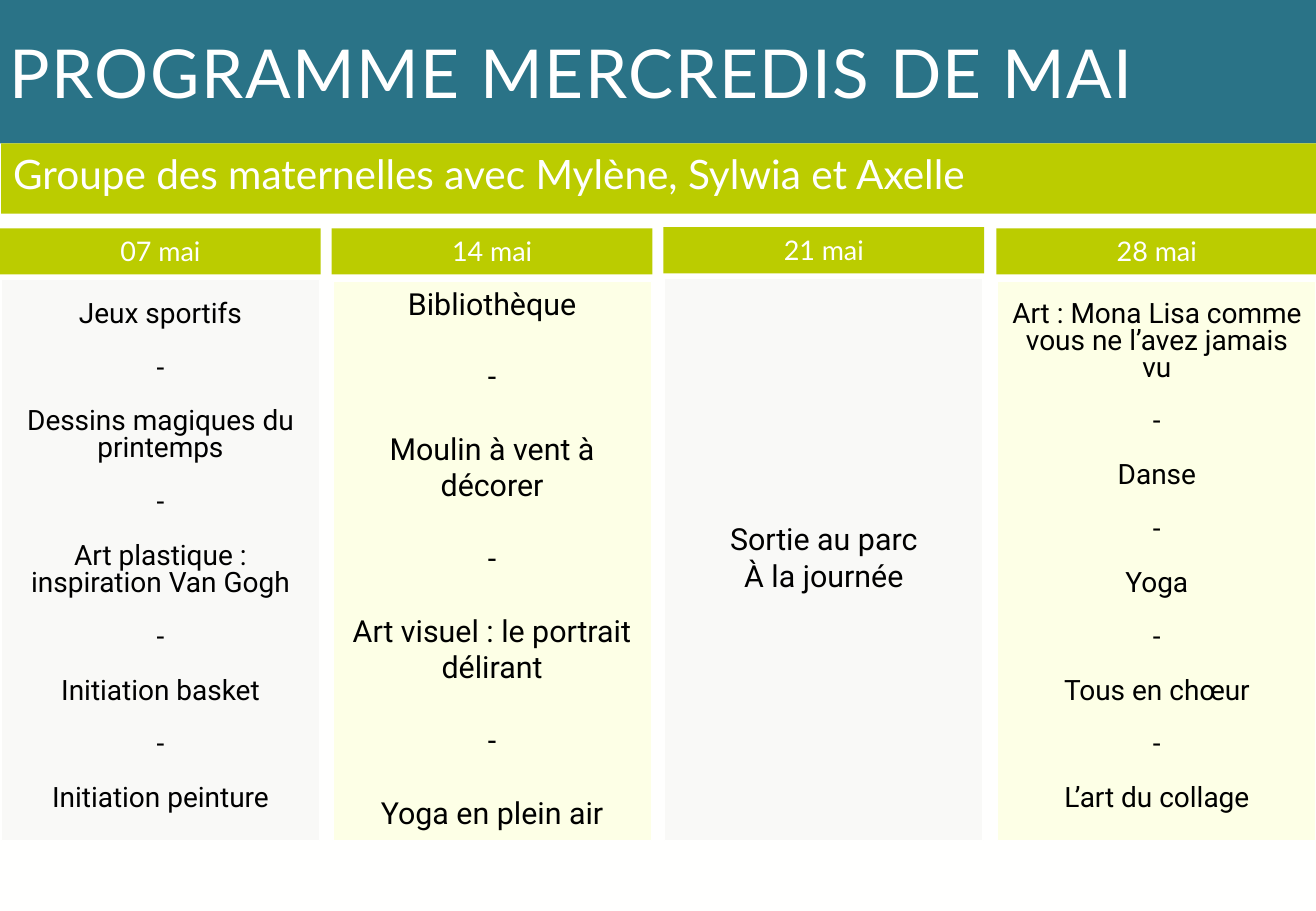
from lxml import etree
from pptx import Presentation
from pptx.dml.color import RGBColor
from pptx.enum.shapes import MSO_SHAPE as SHAPE
from pptx.enum.text import MSO_ANCHOR as ANCHOR, PP_ALIGN as ALIGN
from pptx.oxml.ns import qn
from pptx.util import Inches, Pt

BLUE = RGBColor(0x2A, 0x73, 0x87)
LIME = RGBColor(0xBB, 0xCC, 0x00)
CREAM = RGBColor(0xFA, 0xFF, 0xC2)
GREY = RGBColor(0xEE, 0xEC, 0xE8)
PAPER = RGBColor(0xFF, 0xFF, 0xFE)
WHITE = RGBColor(0xFF, 0xFF, 0xFF)
BLACK = RGBColor(0, 0, 0)

COLUMN_WIDTH = 2.64
BOTTOM = 6.92

# date, left, date top, panel top, panel colour, opacity %, size, line spacing, gap
COLUMNS = [
    ("07 mai", 0, 1.88, 2.3, GREY, 30, 16.6, 0.8, 16),
    ("14 mai", 2.73, 1.88, 2.32, CREAM, 40, 18, 1, 21.5),
    ("21 mai", 5.46, 1.87, 2.29, GREY, 30, 18, 1, 0),
    ("28 mai", 8.2, 1.88, 2.32, CREAM, 40, 16.6, 0.8, 16),
]
ACTIVITIES = {
    "07 mai": ["Jeux sportifs", "-", "Dessins magiques du printemps", "-",
               "Art plastique : inspiration Van Gogh", "-",
               "Initiation basket", "-", "Initiation peinture"],
    "14 mai": ["Bibliothèque", "-", "Moulin à vent à décorer", "-",
               "Art visuel : le portrait délirant", "-", "Yoga en plein air"],
    "21 mai": ["Sortie au parc", "À la journée"],
    "28 mai": ["Art : Mona Lisa comme vous ne l’avez jamais vu", "-", "Danse", "-",
               "Yoga", "-", "Tous en chœur", "-", "L’art du collage"],
}


def add_rect(slide, left, top, width, height, fill):
    sp = slide.shapes.add_shape(SHAPE.RECTANGLE, Inches(left), Inches(top),
                                Inches(width), Inches(height))
    sp.shadow.inherit = False
    sp.fill.solid()
    sp.fill.fore_color.rgb = fill
    sp.line.fill.background()
    return sp


def add_panel(slide, left, top, fill, opacity):
    sp = add_rect(slide, left + 0.01, top, COLUMN_WIDTH - 0.02, BOTTOM - top, fill)
    color = sp.fill._xPr.find(qn("a:solidFill"))[0]
    etree.SubElement(color, qn("a:alpha")).set("val", str(opacity * 1000))
    sp.line.color.rgb = PAPER
    sp.line.width = Pt(0.75)


def write(sp, lines, size, font, color, align=ALIGN.CENTER, anchor=ANCHOR.TOP,
          spacing=1, gap=0):
    tf = sp.text_frame
    tf.word_wrap = True
    tf.vertical_anchor = anchor
    for i, line in enumerate(lines):
        p = tf.add_paragraph() if i else tf.paragraphs[0]
        p.text = line
        p.alignment = align
        p.line_spacing = spacing
        p.space_before = Pt(gap if i else 0)
        p.font.size = Pt(size)
        p.font.name = font
        p.font.color.rgb = color


def add_column(slide, date, left, date_top, panel_top, fill, opacity,
               size, spacing, gap):
    add_panel(slide, left, panel_top, fill, opacity)
    # Activities
    text_top = date_top + 0.38
    tb = slide.shapes.add_textbox(Inches(left), Inches(text_top),
                                  Inches(COLUMN_WIDTH), Inches(BOTTOM - text_top))
    write(tb, ACTIVITIES[date], size, "Roboto", BLACK, anchor=ANCHOR.MIDDLE,
          spacing=spacing, gap=gap)
    # Date label
    label = add_rect(slide, left, date_top, COLUMN_WIDTH, 0.38, LIME)
    write(label, [date], 16, "Lato", PAPER)


def main():
    prs = Presentation()
    prs.slide_width, prs.slide_height = Inches(10.83), Inches(7.5)
    s = prs.slides.add_slide(prs.slide_layouts[6])
    s.background.fill.solid()
    s.background.fill.fore_color.rgb = PAPER

    # Title and group banners
    title = add_rect(s, -0.02, 0, 10.86, 1.18, BLUE)
    write(title, ["PROGRAMME MERCREDIS DE MAI"], 40, "Lato", WHITE,
          ALIGN.LEFT, ANCHOR.MIDDLE)
    r = title.text_frame.paragraphs[0].runs[0]
    r.font._element.set("spc", "100")
    group = add_rect(s, 0.01, 1.18, 10.83, 0.58, LIME)
    write(group, ["Groupe des maternelles avec Mylène, Sylwia et Axelle"],
          24, "Lato", PAPER, ALIGN.LEFT)

    # One column per Wednesday
    for column in COLUMNS:
        add_column(s, *column)

    prs.save("out.pptx")


if __name__ == "__main__":
    main()
